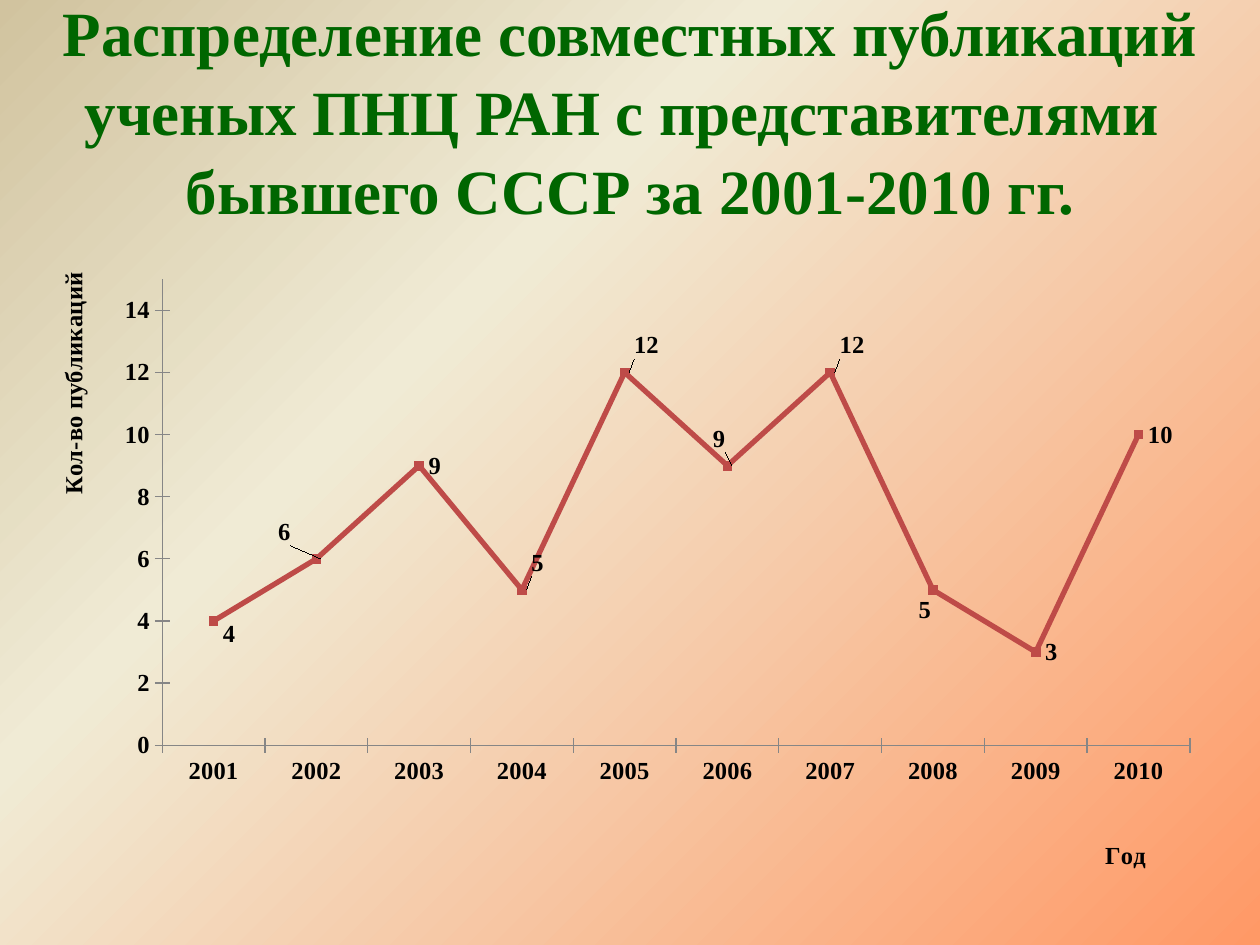
"""Build the slide on joint publications by year, 2001-2010."""
from copy import deepcopy
from lxml.etree import SubElement
from pptx import Presentation
from pptx.chart.data import CategoryChartData
from pptx.dml.color import RGBColor
from pptx.enum.chart import (XL_CHART_TYPE, XL_LABEL_POSITION as LabelPos,
                             XL_MARKER_STYLE, XL_TICK_MARK)
from pptx.enum.text import MSO_ANCHOR, MSO_AUTO_SIZE, PP_ALIGN
from pptx.oxml.ns import qn
from pptx.util import Pt

color = RGBColor.from_string
SERIF = "Times New Roman"


def style(font, size=14, hue="000000"):
    font.name, font.size, font.bold = SERIF, Pt(size), True
    font.color.rgb = color(hue)


def place(parent, index, **settings):
    for old in parent.findall(qn("c:layout")):
        parent.remove(old)
    layout = SubElement(parent, qn("c:layout"))
    parent.insert(index, layout)
    manual = SubElement(layout, qn("c:manualLayout"))
    for name, value in settings.items():
        SubElement(manual, qn(f"c:{name}")).set("val", str(value))


prs = Presentation()
prs.slide_width, prs.slide_height = Pt(720), Pt(540)
slide = prs.slides.add_slide(prs.slide_layouts[5])

backdrop = slide.background.fill
backdrop.gradient()
last_stop = slide.element.xpath(".//a:gs")[-1]
last_stop.addnext(deepcopy(last_stop))
stops = [(0, "FF9966"), (0.65, "F0EBD5"), (1, "D1C39F")]
for stop, (position, hue) in zip(backdrop.gradient_stops, stops):
    stop.position, stop.color.rgb = position, color(hue)
backdrop.gradient_angle = 135

title = slide.shapes.title
title.left, title.top, title.width, title.height = Pt(0), Pt(0), Pt(720), Pt(124)
heading = title.text_frame
heading.text = ("Распределение совместных публикаций ученых ПНЦ РАН "
                "с представителями \vбывшего СССР за 2001-2010 гг.")
heading.word_wrap, heading.auto_size = True, MSO_AUTO_SIZE.NONE
heading.vertical_anchor = MSO_ANCHOR.MIDDLE
heading_line = heading.paragraphs[0]
heading_line.alignment, heading_line.line_spacing = PP_ALIGN.CENTER, 1.05
style(heading_line.font, 36, "006600")

publications = CategoryChartData()
publications.categories = [str(year) for year in range(2001, 2011)]
publications.add_series("Series 1", [4, 6, 9, 5, 12, 9, 12, 5, 3, 10])
chart = slide.shapes.add_chart(XL_CHART_TYPE.LINE_MARKERS, Pt(16.5), Pt(126),
                               Pt(680.5), Pt(386), publications).chart
chart.has_legend = chart.has_title = False
chart.font.name, chart.font.size = "Calibri", Pt(10)
chart.font.color.rgb = color("000000")
chart.plots[0].vary_by_categories = False
place(chart.element.find(".//" + qn("c:plotArea")), 0, layoutTarget="inner",
      xMode="edge", yMode="edge", x=0.112, y=0.087, w=0.863, h=0.69)

for axis, caption, x, y in [(chart.category_axis, "Год", 0.9, 0.91),
                            (chart.value_axis, "Кол-во публикаций", 0.02, 0.07)]:
    axis.has_major_gridlines = False
    axis.major_tick_mark = XL_TICK_MARK.CROSS
    axis.format.line.color.rgb = color("868686")
    axis.format.line.width = Pt(0.75)
    style(axis.tick_labels.font)
    axis_title = axis.axis_title
    axis_title.text_frame.text = caption
    style(axis_title.text_frame.paragraphs[0].font)
    place(axis.axis_title.text_frame._txBody.getparent().getparent(), 1,
          xMode="edge", yMode="edge", x=x, y=y)
chart.value_axis.minimum_scale, chart.value_axis.maximum_scale = 0, 15
chart.value_axis.major_unit = 2

trend = chart.plots[0].series[0]
trend.smooth = False
trend.format.line.color.rgb = color("BE4B48")
trend.format.line.width = Pt(3)
trend.marker.style, trend.marker.size = XL_MARKER_STYLE.SQUARE, 5
trend.marker.format.fill.solid()
trend.marker.format.fill.fore_color.rgb = color("C0504D")
trend.marker.format.line.color.rgb = color("BE4B48")

values = trend.data_labels
values.show_value, values.position = True, LabelPos.RIGHT
style(values.font)
label_shifts = {0: (0, 0.02), 1: (-0.04, -0.04), 3: (0, -0.04), 4: (0, -0.04),
                5: (-0.02, -0.04), 6: (0, -0.04), 7: (-0.02, 0.03)}
for index, (x, y) in label_shifts.items():
    label = trend.points[index].data_label
    style(label.font)
    label.position = LabelPos.RIGHT
for label_xml, (x, y) in zip(chart.element.iter(qn("c:dLbl")), label_shifts.values()):
    place(label_xml, 1, x=x, y=y)

prs.save("out.pptx")
